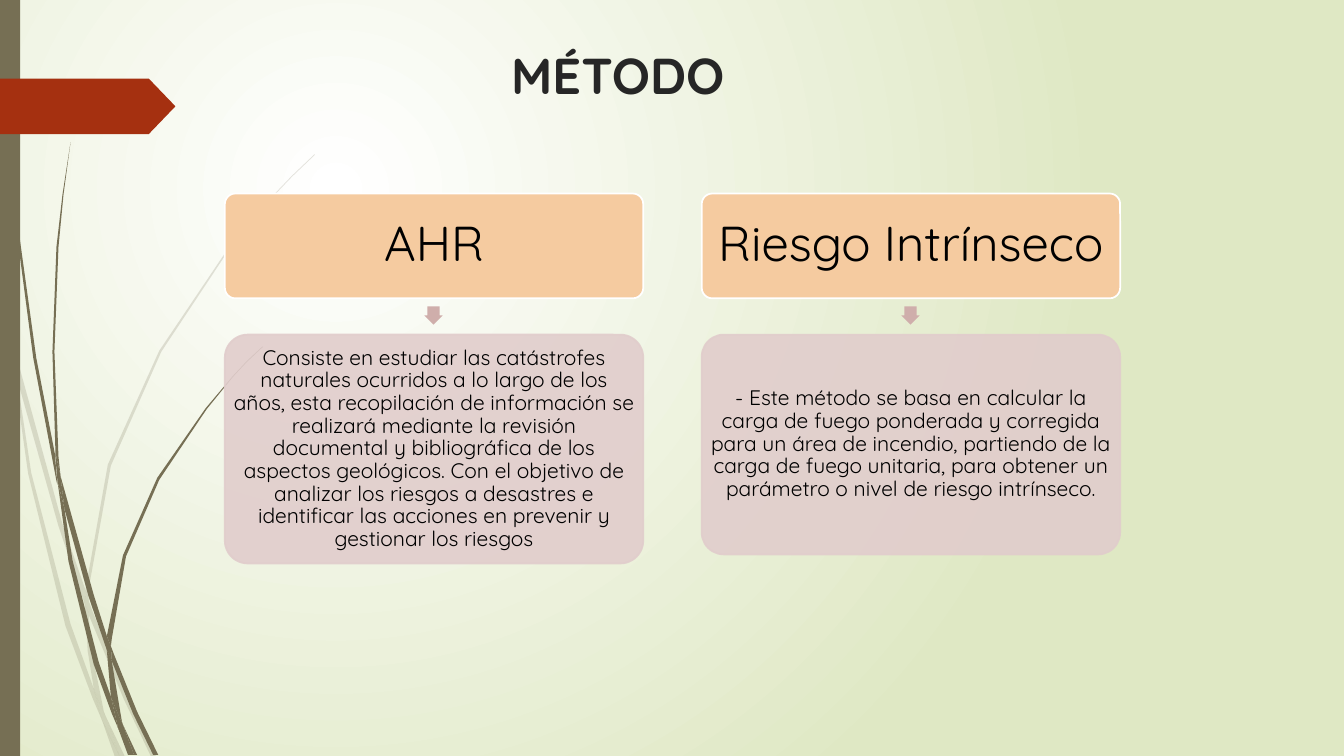
from dataclasses import dataclass

from lxml import etree
from pptx import Presentation
from pptx.dml.color import RGBColor
from pptx.enum.shapes import MSO_SHAPE
from pptx.enum.text import MSO_ANCHOR, PP_ALIGN
from pptx.oxml.ns import qn
from pptx.util import Pt

RECT = MSO_SHAPE.RECTANGLE
ROUNDED = MSO_SHAPE.ROUNDED_RECTANGLE
DOWN_ARROW = MSO_SHAPE.DOWN_ARROW
PENTAGON = MSO_SHAPE.PENTAGON
TOP, MIDDLE = MSO_ANCHOR.TOP, MSO_ANCHOR.MIDDLE
LEFT, CENTER = PP_ALIGN.LEFT, PP_ALIGN.CENTER
SCALE = 9144


@dataclass(frozen=True)
class Theme:
    font: str = "Quicksand"
    title_size: int = 36
    header_size: int = 35
    body_size: int = 15
    glow: str = "FFFFFF"
    meadow: str = "DFE8C4"
    grass: str = "766F54"
    tag: str = "A53010"
    title: str = "262626"
    text: str = "000000"
    header: str = "F5CBA0"
    border: str = "FFFFFF"
    arrow: str = "CFAEAB"
    body: str = "E1CDCC"


PALE_BLADES = [
    [(11, 350), (9, 322), (0, 282), (0, 299), (10, 344)],
    [(58, 522), (84, 599), (85, 586), (62, 520), (14, 345), (17, 376)],
    [(92, 607), (88, 596), (88, 610), (123, 694), (150, 751), (155, 751), (127, 692)],
    [(119, 751), (124, 751), (105, 711)],
    [(93, 683), (70, 619), (31, 469), (17, 376), (11, 350), (28, 470),
     (65, 621), (92, 693), (101, 714), (99, 707)],
    [(84, 599), (87, 646), (93, 683), (96, 692), (105, 711), (103, 706),
     (91, 646), (88, 610), (88, 608)],
    [(88, 584), (110, 462), (160, 349), (229, 245), (268, 198), (290, 175),
     (312, 154), (312, 153), (289, 175), (268, 197), (228, 244), (158, 348),
     (107, 461), (85, 584), (85, 586), (88, 596)],
    [(101, 714), (114, 751), (119, 751)],
    [(88, 608), (88, 596), (85, 586), (84, 599)],
    [(96, 692), (93, 683), (99, 707), (101, 714), (119, 751), (105, 711)],
]
DARK_BLADES = [
    [(7, 110), (17, 233), (33, 355), (56, 477), (57, 481), (55, 457), (55, 453),
     (36, 355), (19, 232), (8, 109), (5, 48), (4, 0), (3, 0), (4, 48)],
    [(88, 592), (106, 645), (106, 631), (93, 590), (60, 472), (64, 505)],
    [(113, 649), (110, 641), (111, 656), (132, 708), (152, 749), (157, 749), (136, 706)],
    [(110, 691), (98, 657), (72, 556), (64, 505), (57, 477), (68, 557),
     (93, 659), (111, 708), (117, 722), (116, 717)],
    [(60, 472), (58, 453), (54, 349), (58, 245), (63, 193), (70, 141),
     (62, 193), (56, 245), (52, 349), (55, 449)],
    [(133, 749), (136, 749), (122, 719)],
    [(57, 477), (64, 505), (60, 472), (55, 449), (55, 453)],
    [(111, 633), (125, 552), (158, 476), (205, 406), (231, 374), (245, 359),
     (261, 344), (260, 344), (245, 358), (231, 373), (204, 405), (156, 474),
     (122, 551), (106, 631), (110, 641)],
    [(117, 722), (127, 749), (131, 749)],
    [(106, 645), (110, 691), (116, 706), (122, 719), (121, 716), (111, 656), (109, 651)],
    [(106, 645), (111, 656), (110, 641), (106, 631)],
    [(116, 706), (110, 691), (116, 717), (117, 722), (130, 749), (133, 749), (122, 719)],
]
METHODS = [
    ("AHR", 227,
     "Consiste en estudiar las catástrofes naturales ocurridos a lo largo de los "
     "años, esta recopilación de información se realizará mediante la revisión "
     "documental y bibliográfica de los aspectos geológicos. Con el objetivo de "
     "analizar los riesgos a desastres e identificar las acciones en prevenir y "
     "gestionar los riesgos"),
    ("Riesgo Intrínseco", 218,
     "- Este método se basa en calcular la carga de fuego ponderada y corregida "
     "para un área de incendio, partiendo de la carga de fuego unitaria, para "
     "obtener un parámetro o nivel de riesgo intrínseco."),
]


def px(n):
    return n * SCALE


def rgb(color):
    return RGBColor.from_string(color)


class Deck:
    def __init__(self, theme):
        self.theme = theme
        self.prs = Presentation()
        self.prs.slide_width, self.prs.slide_height = px(1333), px(750)
        self.s = self.prs.slides.add_slide(self.prs.slide_layouts[5])

    def background(self, inner, outer):
        fill = self.s.background.fill
        fill.gradient()
        for stop, color in zip(fill.gradient_stops, (inner, outer)):
            stop.color.rgb = rgb(color)
        grad = next(self.s._element.iter(qn("a:gradFill")))
        grad.remove(grad.find(qn("a:lin")))
        circle = etree.SubElement(grad, qn("a:path"), {"path": "circle"})
        etree.SubElement(circle, qn("a:fillToRect"),
                         {"l": "50000", "t": "50000", "r": "100000", "b": "100000"})

    def paint(self, sp, fill, line=None, alpha=100):
        sp.shadow.inherit = False
        sp.fill.solid()
        sp.fill.fore_color.rgb = rgb(fill)
        if line:
            sp.line.color.rgb = rgb(line)
            sp.line.width = Pt(1.25)
        else:
            sp.line.fill.background()
        if alpha < 100:
            for clr in sp._element.spPr.iter(qn("a:srgbClr")):
                etree.SubElement(clr, qn("a:alpha"), {"val": str(alpha * 1000)})

    def shape(self, kind, x, y, w, h, fill, line=None, alpha=100, adj=()):
        sp = self.s.shapes.add_shape(kind, px(x), px(y), px(w), px(h))
        for i, value in enumerate(adj):
            sp.adjustments[i] = value
        self.paint(sp, fill, line, alpha)
        return sp

    def blade(self, points, alpha=100):
        builder = self.s.shapes.build_freeform(*points[0], scale=SCALE)
        builder.add_line_segments(points[1:])
        self.paint(builder.convert_to_shape(), self.theme.grass, alpha=alpha)

    def label(self, sp, text, size, color, align, anchor, inset, bold=False):
        tf = sp.text_frame
        tf.text = text
        tf.word_wrap = True
        tf.vertical_anchor = anchor
        tf.margin_left = tf.margin_right = px(inset)
        tf.margin_top = tf.margin_bottom = px(5 if anchor == TOP else inset)
        p = tf.paragraphs[0]
        p.alignment = align
        p.font.name, p.font.size, p.font.bold = self.theme.font, Pt(size), bold
        p.font.color.rgb = rgb(color)
        return p

    def title(self, text, x, y, w, h):
        sp = self.s.shapes.title
        sp.left, sp.top, sp.width, sp.height = px(x), px(y), px(w), px(h)
        self.label(sp, text, self.theme.title_size, self.theme.title, LEFT, TOP, 10, True)

    def card(self, x, y, w, h, text, size, inset, fill, line, alpha=100):
        sp = self.shape(ROUNDED, x, y, w, h, fill, line, alpha, (0.1,))
        p = self.label(sp, text, size, self.theme.text, CENTER, MIDDLE, inset)
        p.line_spacing = 0.9

    def method(self, x, name, body_height, description):
        t, w, arrow = self.theme, 415, 18
        self.card(x, 192, w, 104, name, t.header_size, 5, t.header, t.border)
        self.shape(DOWN_ARROW, x + (w - arrow) // 2, 304, arrow, arrow, t.arrow,
                   adj=(0.67, 0.5))
        self.card(x, 332, w, body_height, description, t.body_size, 2, t.body, t.body, 90)


def main():
    t = Theme()
    deck = Deck(t)
    deck.background(t.glow, t.meadow)
    for points in PALE_BLADES:
        deck.blade(points, 20)
    for points in DARK_BLADES:
        deck.blade(points)
    deck.shape(RECT, 0, 0, 20, 750, t.grass)
    deck.shape(PENTAGON, 0, 78, 174, 55, t.tag, adj=(0.48,))
    deck.title("MÉTODO", 497, 39, 260, 79)
    for i, (name, body_height, description) in enumerate(METHODS):
        deck.method(223 + i * 473, name, body_height, description)
    deck.prs.save("out.pptx")


if __name__ == "__main__":
    main()
